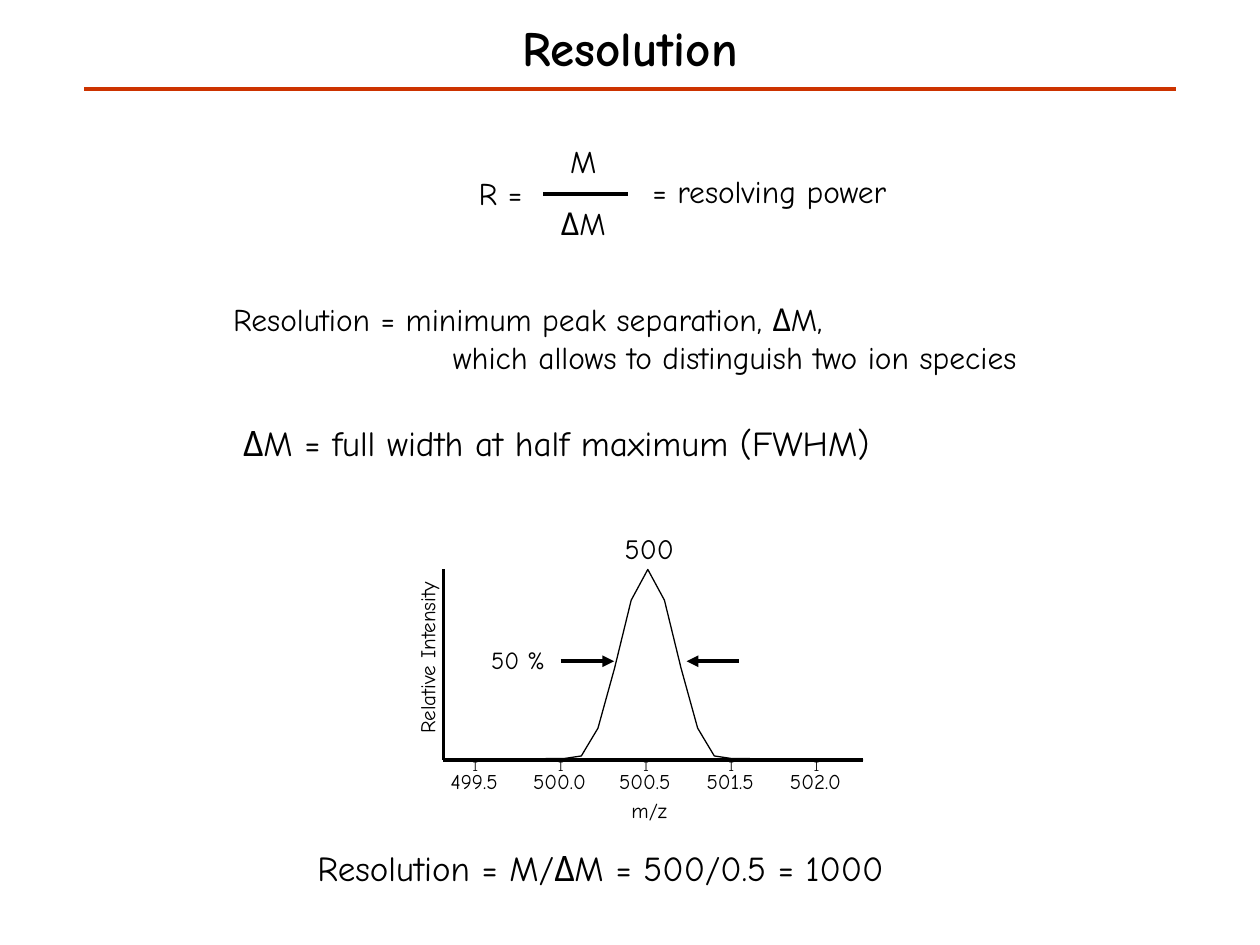
from lxml import etree
from pptx import Presentation
from pptx import util as u
from pptx.dml.color import RGBColor
from pptx.enum import shapes, text
from pptx.oxml.ns import qn

FONT = "Comic Neue"
BLACK, RED = "000000", "CC3300"
CENTER, LEFT = text.PP_ALIGN.CENTER, text.PP_ALIGN.LEFT

# Peak plot, in cm
AXIS_LEFT, AXIS_RIGHT, AXIS_TOP, BASELINE = 8.94, 17.4, 11.48, 15.32
PEAK_X, POINT_STEP = 13.06, 0.335
HALF_PEAK = [3.84, 3.22, 1.85, 0.64, 0.08, 0.03, 0.03, 0, 0, 0, 0, 0, 0]
TICK_LABELS = ["499.5", "500.0", "500.5", "501.5", "502.0"]
TICK_STEP = 1.72


def color(hex_value):
    return RGBColor.from_string(hex_value)


def add_text(slide, lines, box, size, align=LEFT, bold=False):
    shape = slide.shapes.add_textbox(*(u.Cm(value) for value in box))
    frame = shape.text_frame
    frame.word_wrap = True
    frame.text = "\n".join(lines)
    font_format = {"name": FONT, "size": u.Pt(size), "bold": bold}
    for paragraph in frame.paragraphs:
        paragraph.alignment = align
        for run in paragraph.runs:
            for name, value in font_format.items():
                setattr(run.font, name, value)
            run.font.color.rgb = color(BLACK)
    return shape


def add_line(slide, start, end, width, line_color=BLACK, arrow=False):
    points = (u.Cm(value) for value in (*start, *end))
    line = slide.shapes.add_connector(shapes.MSO_CONNECTOR.STRAIGHT, *points)
    line.line.color.rgb = color(line_color)
    line.line.width = u.Pt(width)
    if arrow:
        outline = line.line._get_or_add_ln()
        etree.SubElement(outline, qn("a:tailEnd"), type="triangle")
    etree.SubElement(line._element.spPr, qn("a:effectLst"))


def add_curve(slide, points):
    points = [(u.Cm(x), u.Cm(y)) for x, y in points]
    builder = slide.shapes.build_freeform(*points[0])
    builder.add_line_segments(points[1:], close=False)
    curve = builder.convert_to_shape()
    curve.shadow.inherit = False
    curve.fill.background()
    curve.line.color.rgb = color(BLACK)
    curve.line.width = u.Pt(0)


def add_heading(slide):
    title = add_text(slide, ["Resolution"], (0, 0, 25.4, 1.9), 28, CENTER, True)
    title.text_frame.vertical_anchor = text.MSO_ANCHOR.MIDDLE
    add_line(slide, (1.7, 1.8), (23.7, 1.8), 2.5, RED)


def add_formula(slide):
    add_text(slide, ["R ="], (9.4, 3.38, 2.74, 1.02), 18)
    add_text(slide, ["M"], (10.39, 2.74, 2.74, 1.02), 18, CENTER)
    add_line(slide, (10.95, 3.91), (12.65, 3.91), 2.25)
    add_text(slide, ["ΔM"], (10.39, 3.99, 2.74, 1.02), 18, CENTER)
    add_text(slide, ["= resolving power"], (12.9, 3.35, 5.72, 1.02), 18)


def add_definitions(slide):
    lines = ["Resolution = minimum peak separation, ΔM,",
             "which allows to distinguish two ion species"]
    definition = add_text(slide, lines, (4.45, 5.92, 20.9, 1.8), 18)
    # The second line is indented to stand under the explanation
    second = definition.text_frame.paragraphs[1]
    second._p.get_or_add_pPr().set("marL", str(u.Cm(4.43)))
    add_text(slide, ["ΔM = full width at half maximum (FWHM)"],
             (4.65, 8.38, 13.77, 1.96), 20)


def add_peak_plot(slide):
    # Axes and their titles
    add_line(slide, (AXIS_LEFT, BASELINE), (AXIS_RIGHT, BASELINE), 0)
    add_line(slide, (AXIS_LEFT, BASELINE), (AXIS_LEFT, AXIS_TOP), 0)
    intensity = add_text(slide, ["Relative Intensity"],
                         (6.17, 12.88, 4.88, 0.76), 12, CENTER)
    intensity.rotation = 270
    add_text(slide, ["m/z"], (12.14, 15.95, 1.9, 0.76), 12, CENTER)

    # Tick marks and values
    for index, label in enumerate(TICK_LABELS):
        offset = index * TICK_STEP
        add_text(slide, ["I"], (9.28 + offset, 15.14, 0.84, 0.61), 8)
        add_text(slide, [label], (8.61 + offset, 15.37, 1.9, 0.76), 12, CENTER)

    # Symmetric peak
    last = len(HALF_PEAK) - 1
    peak = [(PEAK_X + step * POINT_STEP, BASELINE - HALF_PEAK[abs(step)])
            for step in range(-last, last + 1)]
    add_curve(slide, [(AXIS_LEFT, BASELINE), *peak, (AXIS_RIGHT, BASELINE)])
    add_text(slide, ["500"], (12.14, 10.59, 1.9, 0.94), 16, CENTER)

    # Width at half maximum
    add_text(slide, ["50 %"], (9.65, 12.88, 1.9, 0.86), 14)
    for start, end in ((11.3, 12.38), (14.89, 13.84)):
        add_line(slide, (start, 13.33), (end, 13.33), 2.25, arrow=True)


def main():
    presentation = Presentation()
    presentation.slide_width = u.Cm(25.4)
    presentation.slide_height = u.Cm(19.05)
    slide = presentation.slides.add_slide(presentation.slide_layouts[6])

    add_heading(slide)
    add_formula(slide)
    add_definitions(slide)
    add_peak_plot(slide)
    add_text(slide, ["Resolution = M/ΔM = 500/0.5 = 1000"],
             (6.15, 16.94, 14.6, 1.12), 20)

    presentation.save("out.pptx")


if __name__ == "__main__":
    main()
